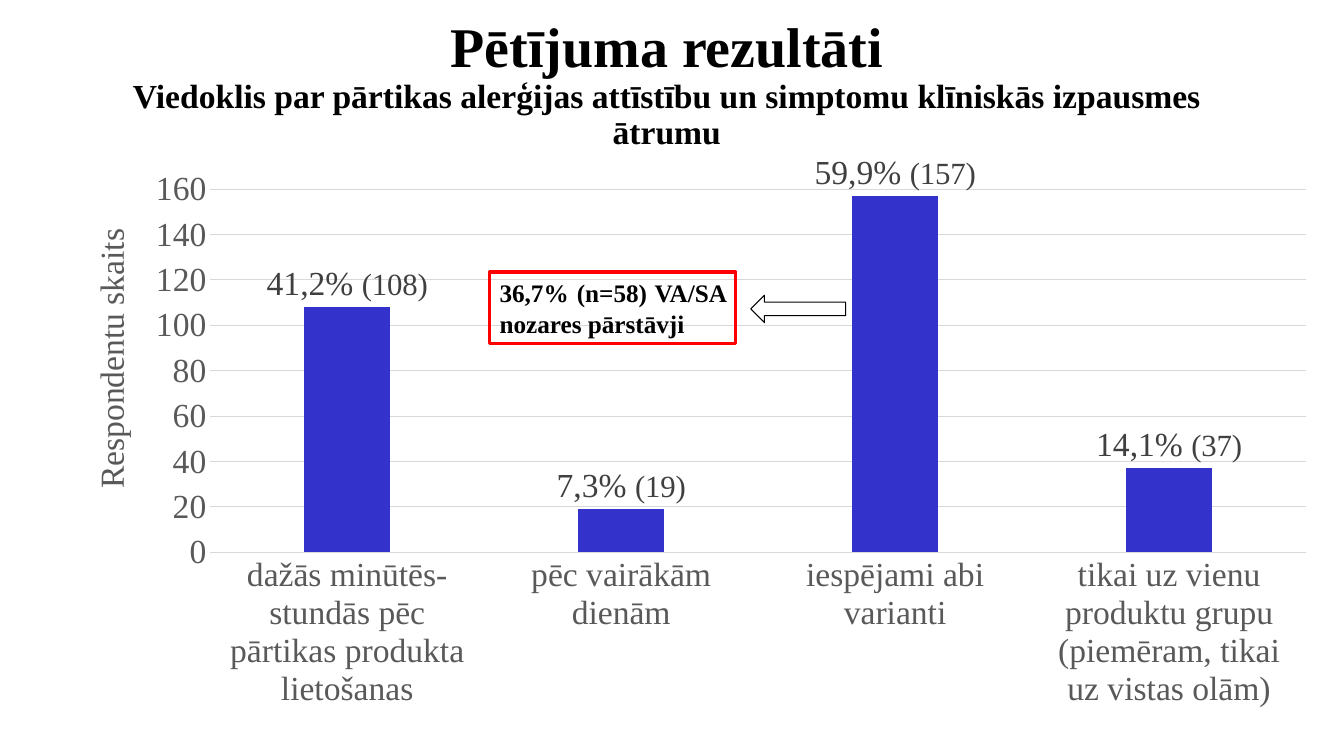
from dataclasses import dataclass, field
from typing import Any

from lxml import etree
from pptx import Presentation
from pptx import util as u
from pptx.chart.data import CategoryChartData
from pptx.dml.color import RGBColor
from pptx.enum import chart as ch, shapes, text
from pptx.oxml.ns import qn

FONT = "Times New Roman"
COLORS = {"black": "000000", "white": "FFFFFF", "bar": "3333CC", "axis": "595959",
          "label": "404040", "grid": "D9D9D9", "frame": "FF0000"}


@dataclass
class Run:
    text: str
    size: float
    bold: bool = True


@dataclass
class Box:
    kind: Any
    at: tuple[float, float, float, float]
    line: str | None = None
    width: float = 0
    fill: str | None = None
    align: Any = None
    spacing: float = 1.0
    runs: list[Run] = field(default_factory=list)


@dataclass
class Answer:
    category: str
    count: int
    percent: str


BOXES = [
    Box(shapes.MSO_SHAPE.RECTANGLE, (1.73, 0.38, 30.15, 3.56),
        align=text.PP_ALIGN.CENTER, spacing=0.9,
        runs=[Run("Pētījuma rezultāti", 40),
              Run("Viedoklis par pārtikas alerģijas attīstību un simptomu "
                  "klīniskās izpausmes ātrumu", 24)]),
    Box(shapes.MSO_SHAPE.RECTANGLE, (12.34, 6.86, 6.2, 1.8), "frame", 2.5,
        align=text.PP_ALIGN.JUSTIFY,
        runs=[Run("36,7% (n=58) VA/SA nozares pārstāvji", 18)]),
    Box(shapes.MSO_SHAPE.LEFT_ARROW, (18.92, 7.44, 2.39, 0.69), "black", 0.75, "white"),
]
ANSWERS = [
    Answer("dažās minūtēs-stundās pēc pārtikas produkta lietošanas", 108, "41,2%"),
    Answer("pēc vairākām dienām", 19, "7,3%"),
    Answer("iespējami abi varianti", 157, "59,9%"),
    Answer("tikai uz vienu produktu grupu (piemēram, tikai uz vistas olām)", 37, "14,1%"),
]


def rgb(name: str) -> RGBColor:
    return RGBColor.from_string(COLORS[name])


def set_all(obj: Any, **values: Any) -> None:
    for name, value in values.items():
        setattr(obj, name, value)


def set_font(font: Any, size: float, color: str, bold: bool = False) -> None:
    set_all(font, name=FONT, size=u.Pt(size), bold=bold)
    font.color.rgb = rgb(color)


def set_line(line: Any, color: str | None, width: float = 0.75) -> None:
    if color is None:
        line.fill.background()
    else:
        line.color.rgb = rgb(color)
        line.width = u.Pt(width)


def manual_layout(**values: Any) -> Any:
    layout = etree.Element(qn("c:layout"))
    manual = etree.SubElement(layout, qn("c:manualLayout"))
    for name, value in values.items():
        etree.SubElement(manual, qn(f"c:{name}")).set("val", str(value))
    return layout


def replace_layout(parent: Any, index: int, layout: Any) -> None:
    for old in parent.findall(qn("c:layout")):
        parent.remove(old)
    parent.insert(index, layout)


def add_box(slide: Any, box: Box) -> None:
    sp = slide.shapes.add_shape(box.kind, *map(u.Cm, box.at))
    sp.shadow.inherit = False
    set_line(sp.line, box.line, box.width)
    if box.fill:
        sp.fill.solid()
        sp.fill.fore_color.rgb = rgb(box.fill)
    else:
        sp.fill.background()
    if not box.runs:
        return
    tf = sp.text_frame
    set_all(tf, word_wrap=True, vertical_anchor=text.MSO_ANCHOR.MIDDLE)
    p = tf.paragraphs[0]
    set_all(p, alignment=box.align, line_spacing=box.spacing)
    for i, run in enumerate(box.runs):
        if i:
            p.add_line_break()
        r = p.add_run()
        r.text = run.text
        set_font(r.font, run.size, "black", run.bold)


def add_answer_chart(slide: Any) -> None:
    data = CategoryChartData()
    data.categories = [a.category for a in ANSWERS]
    data.add_series("Series 1", [a.count for a in ANSWERS])
    frame = slide.shapes.add_chart(ch.XL_CHART_TYPE.COLUMN_CLUSTERED,
                                   *map(u.Cm, (1.14, 3.33, 32, 15.19)), data)
    chart = frame.chart
    set_all(chart, has_legend=False, has_title=False)
    set_font(chart.font, 24, "black")

    # Axes
    cat, val = chart.category_axis, chart.value_axis
    for axis, line in ((cat, "grid"), (val, None)):
        set_all(axis, major_tick_mark=ch.XL_TICK_MARK.NONE,
                minor_tick_mark=ch.XL_TICK_MARK.NONE)
        set_font(axis.tick_labels.font, 24, "axis")
        set_line(axis.format.line, line)
    set_all(val, minimum_scale=0, maximum_scale=170, major_unit=20)
    set_line(val.major_gridlines.format.line, "grid")

    # Value axis title
    tf = val.axis_title.text_frame
    r = tf.paragraphs[0].add_run()
    r.text = "Respondentu skaits"
    set_font(r.font, 24, "axis")
    title = chart.element.find(".//" + qn("c:valAx")).find(qn("c:title"))
    body = title.find(".//" + qn("a:bodyPr"))
    body.set("rot", "-5400000")
    body.set("vert", "horz")
    replace_layout(title, 1, manual_layout(xMode="edge", yMode="edge", x=0.03, y=0.15))

    # Columns and their labels
    plot = chart.plots[0]
    set_all(plot, gap_width=219, overlap=-27, vary_by_categories=False)
    series = plot.series[0]
    series.format.fill.solid()
    series.format.fill.fore_color.rgb = rgb("bar")
    for i, answer in enumerate(ANSWERS):
        label = series.points[i].data_label
        p = label.text_frame.paragraphs[0]
        for part, size in ((f"{answer.percent} ", 24), (f"({answer.count})", 22)):
            r = p.add_run()
            r.text = part
            set_font(r.font, size, "label")
        label.position = ch.XL_LABEL_POSITION.OUTSIDE_END

    # Plot area
    replace_layout(chart.element.find(".//" + qn("c:plotArea")), 0,
                   manual_layout(layoutTarget="inner", xMode="edge", yMode="edge",
                                 x=0.13, y=0.057, w=0.863, h=0.64))


def main() -> None:
    prs = Presentation()
    set_all(prs, slide_width=u.Cm(33.87), slide_height=u.Cm(19.05))
    slide = prs.slides.add_slide(prs.slide_layouts[6])
    heading, *notes = BOXES
    add_box(slide, heading)
    add_answer_chart(slide)
    for box in notes:
        add_box(slide, box)
    prs.save("out.pptx")


if __name__ == "__main__":
    main()
